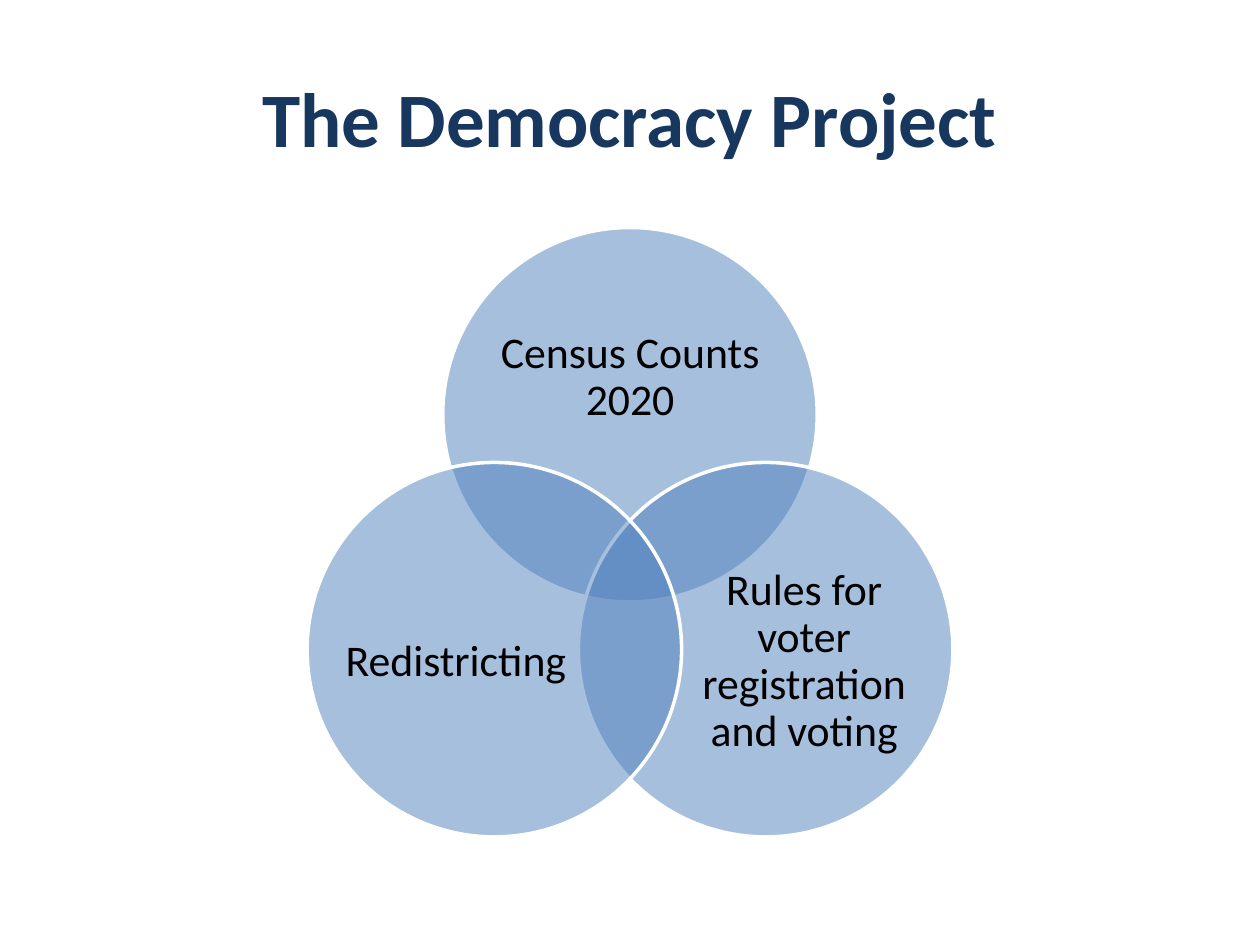
"""Build the Democracy Project slide with its three-circle Venn diagram."""
import math
from dataclasses import dataclass

from lxml import etree
from pptx import Presentation
from pptx.dml.color import RGBColor
from pptx.enum import shapes, text
from pptx.oxml import ns
from pptx.util import Pt


@dataclass(frozen=True)
class Theme:
    font: str = "Calibri"
    title_color: str = "17375E"
    label_color: str = "000000"
    circle_color: str = "4F81BD"
    outline_color: str = "FFFFFF"
    title_size: int = 44
    label_size: int = 25
    outline_width: int = 2
    opacity: int = 50


THEME = Theme()
TITLE = "The Democracy Project"
TOPICS = [
    {"label": "Census Counts 2020", "angle": -90, "shift": (0, -21), "size": (157, 96.5)},
    {"label": "Rules for voter registration and voting", "angle": 30, "shift": (22, 7), "size": (128, 117.5)},
    {"label": "Redistricting", "angle": 150, "shift": (-22, 7), "size": (128, 117.5)},
]
CENTER = (360, 326.5)
ORBIT = 89.5
DIAMETER = 214


def centered(x, y, width, height):
    return [Pt(value) for value in (x - width / 2, y - height / 2, width, height)]


def style(para, size, color, bold=False):
    para.alignment = text.PP_ALIGN.CENTER
    for span in para.runs:
        span.font.name = THEME.font
        span.font.size = Pt(size)
        span.font.bold = bold
        span.font.color.rgb = RGBColor.from_string(color)


def add_title(page):
    box = page.shapes.title
    box.left, box.top, box.width, box.height = Pt(36), Pt(21.6), Pt(648), Pt(90)
    box.text_frame.text = TITLE
    box.text_frame.vertical_anchor = text.MSO_ANCHOR.MIDDLE
    style(box.text_frame.paragraphs[0], THEME.title_size, THEME.title_color, True)


def add_circle(venn, x, y):
    circle = venn.shapes.add_shape(shapes.MSO_SHAPE.OVAL, *centered(x, y, DIAMETER, DIAMETER))
    circle.shadow.inherit = False
    circle.fill.solid()
    circle.fill.fore_color.rgb = RGBColor.from_string(THEME.circle_color)
    color = circle.element.spPr.find(ns.qn("a:solidFill"))[0]
    etree.SubElement(color, ns.qn("a:alpha"), val=str(THEME.opacity * 1000))
    circle.line.color.rgb = RGBColor.from_string(THEME.outline_color)
    circle.line.width = Pt(THEME.outline_width)


def add_label(venn, label, x, y, size):
    frame = venn.shapes.add_textbox(*centered(x, y, *size)).text_frame
    frame.word_wrap = True
    frame.vertical_anchor = text.MSO_ANCHOR.MIDDLE
    frame.margin_left = frame.margin_right = frame.margin_top = frame.margin_bottom = 0
    frame.text = label
    para = frame.paragraphs[0]
    para.line_spacing = 0.9
    style(para, THEME.label_size, THEME.label_color)


def add_venn(page):
    venn = page.shapes.add_group_shape()
    for topic in TOPICS:
        angle = math.radians(topic["angle"])
        x = CENTER[0] + ORBIT * math.cos(angle)
        y = CENTER[1] + ORBIT * math.sin(angle)
        across, down = topic["shift"]
        add_circle(venn, x, y)
        add_label(venn, topic["label"], x + across, y + down, topic["size"])


def main():
    deck = Presentation()
    deck.slide_width, deck.slide_height = Pt(720), Pt(540)
    page = deck.slides.add_slide(deck.slide_layouts[5])
    add_title(page)
    add_venn(page)
    deck.save("out.pptx")


if __name__ == "__main__":
    main()
